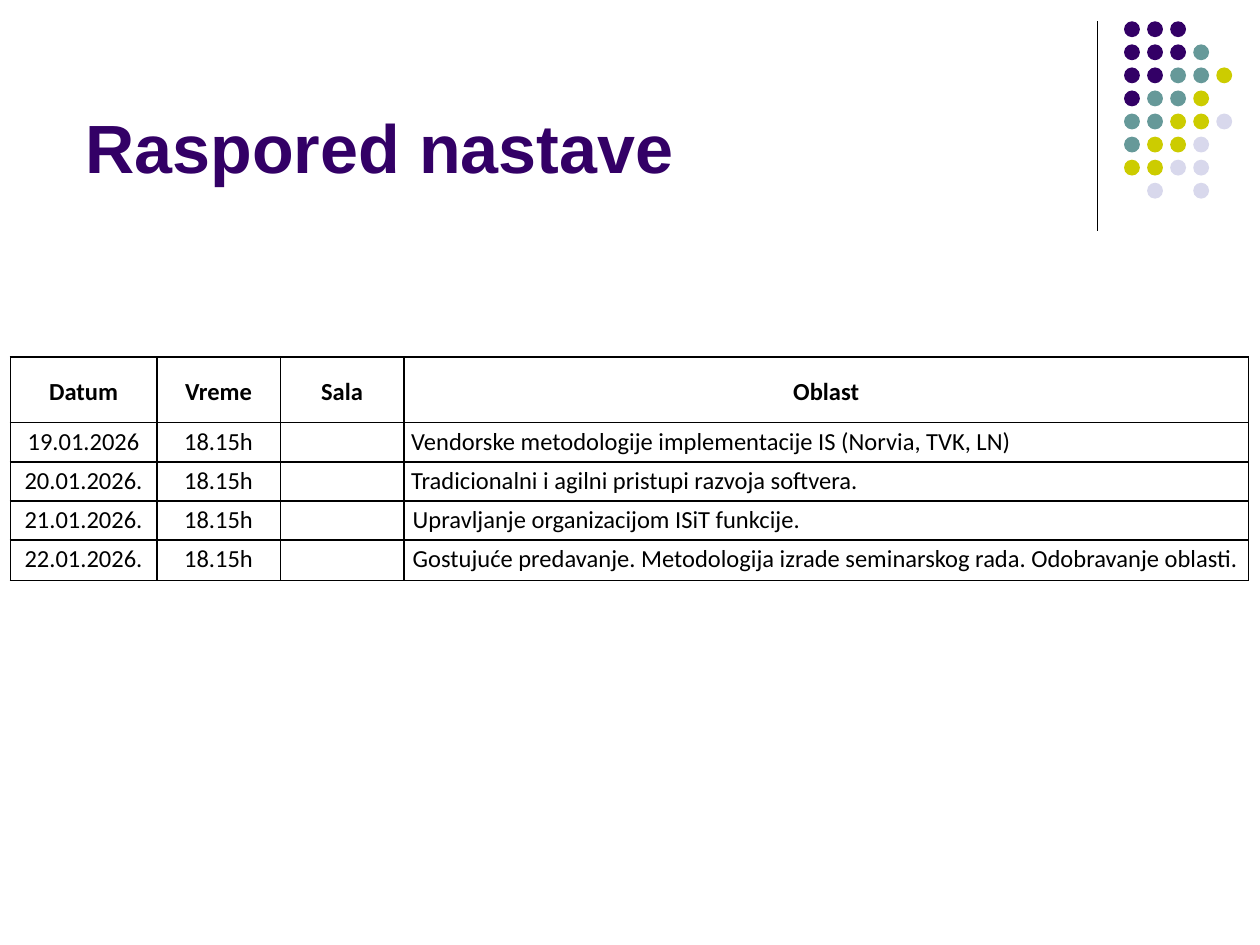
from lxml import etree
from pptx import Presentation
from pptx.dml.color import RGBColor
from pptx.enum.shapes import MSO_CONNECTOR, MSO_SHAPE
from pptx.enum.text import MSO_ANCHOR, MSO_AUTO_SIZE, PP_ALIGN
from pptx.oxml.ns import qn
from pptx.util import Cm, Pt

LEFT, CENTER = PP_ALIGN.LEFT, PP_ALIGN.CENTER
TOP, MIDDLE, BOTTOM = MSO_ANCHOR.TOP, MSO_ANCHOR.MIDDLE, MSO_ANCHOR.BOTTOM

COLORS = {
    "purple": "330066",
    "teal": "669999",
    "lime": "CCCC00",
    "lavender": "D8D8EC",
    "black": "000000",
    "white": "FFFFFF",
}
DOT_COLORS = {"P": "purple", "T": "teal", "L": "lime", "V": "lavender"}
DOT_PATTERN = ["PPP", "PPPT", "PPTTL", "PTTL", "TTLLV", "TLLV", "LLVV", " V V"]

HEADINGS = ["Datum", "Vreme", "Sala", "Oblast"]
LECTURES = [
    ["19.01.2026", "18.15h", "",
     "Vendorske metodologije implementacije IS (Norvia, TVK, LN)"],
    ["20.01.2026.", "18.15h", "",
     "Tradicionalni i agilni pristupi razvoja softvera."],
    ["21.01.2026.", "18.15h", "", "Upravljanje organizacijom ISiT funkcije."],
    ["22.01.2026.", "18.15h", "",
     "Gostujuće predavanje. Metodologija izrade seminarskog rada. "
     "Odobravanje oblasti."],
]
COLUMN_WIDTHS = [2.95, 2.49, 2.49, 17.03]
ROW_HEIGHTS = [1.32, 0.79, 0.79, 0.79, 0.81]


def rgb(name):
    return RGBColor.from_string(COLORS[name])


def add_run(paragraph, text, font, size, color, bold):
    run = paragraph.add_run()
    run.text = text
    run.font.name = font
    run.font.size = Pt(size)
    run.font.color.rgb = rgb(color)
    run.font.bold = bold


def place_title(slide, left, top, width, height):
    title = slide.shapes.title
    title.left, title.top = Cm(left), Cm(top)
    title.width, title.height = Cm(width), Cm(height)
    frame = title.text_frame
    frame.word_wrap = True
    frame.auto_size = MSO_AUTO_SIZE.NONE
    frame.vertical_anchor = BOTTOM
    heading = frame.paragraphs[0]
    heading.alignment = LEFT
    add_run(heading, "Raspored nastave", "Arial", 39, "purple", True)


def add_corner_ornament(slide, left, top, width, height):
    """Draw the vertical rule and, along the right edge, the grid of dots."""
    rule = slide.shapes.add_connector(
        MSO_CONNECTOR.STRAIGHT, Cm(left), Cm(top), Cm(left), Cm(top + height))
    rule.line.color.rgb = rgb("black")
    rule.line.width = Pt(0.75)
    etree.SubElement(rule._element.spPr, qn("a:effectLst"))

    diameter, pitch = 0.32, 0.465
    dots_left = left + width - 4 * pitch - diameter
    dots = slide.shapes.add_group_shape()
    for row, pattern in enumerate(DOT_PATTERN):
        for column, code in enumerate(pattern):
            if code == " ":
                continue
            dot = dots.shapes.add_shape(
                MSO_SHAPE.OVAL, Cm(dots_left + column * pitch),
                Cm(top + row * pitch), Cm(diameter), Cm(diameter))
            dot.shadow.inherit = False
            dot.fill.solid()
            dot.fill.fore_color.rgb = rgb(DOT_COLORS[code])
            dot.line.fill.background()


def add_borders(cell):
    properties = cell._tc.get_or_add_tcPr()
    for position, side in enumerate(("a:lnL", "a:lnR", "a:lnT", "a:lnB")):
        border = etree.Element(qn(side), w=str(Pt(1)))
        fill = etree.SubElement(border, qn("a:solidFill"))
        etree.SubElement(fill, qn("a:srgbClr"), val=COLORS["black"])
        properties.insert(position, border)


def fill_cell(cell, text, is_header, column, side_margin):
    cell.margin_left = cell.margin_right = Cm(side_margin)
    cell.margin_top = cell.margin_bottom = 0
    cell.vertical_anchor = MIDDLE if is_header else TOP
    if is_header:
        cell.fill.background()
    else:
        cell.fill.solid()
        cell.fill.fore_color.rgb = rgb("white")
    add_borders(cell)
    if text:
        paragraph = cell.text_frame.paragraphs[0]
        paragraph.alignment = CENTER if is_header or column < 3 else LEFT
        paragraph.line_spacing = 1.15
        add_run(paragraph, text, "Calibri", 14, "black", is_header)


def add_schedule(slide, left, top):
    rows = [HEADINGS] + LECTURES
    schedule = slide.shapes.add_table(
        len(rows), len(HEADINGS), Cm(left), Cm(top),
        Cm(sum(COLUMN_WIDTHS)), Cm(sum(ROW_HEIGHTS))).table
    schedule.first_row = schedule.horz_banding = False
    for column, width in zip(schedule.columns, COLUMN_WIDTHS):
        column.width = Cm(width)
    for row, height in zip(schedule.rows, ROW_HEIGHTS):
        row.height = Cm(height)
    for r, texts in enumerate(rows):
        for c, text in enumerate(texts):
            side_margin = 0.18 if r >= 3 and c == 3 else 0.15
            fill_cell(schedule.cell(r, c), text, r == 0, c, side_margin)


def main():
    presentation = Presentation()
    presentation.slide_width, presentation.slide_height = Cm(25.4), Cm(19.05)
    slide = presentation.slides.add_slide(presentation.slide_layouts[5])
    slide.background.fill.solid()
    slide.background.fill.fore_color.rgb = rgb("white")
    add_corner_ornament(slide, 22.12, 0.43, 2.72, 4.22)
    place_title(slide, 1.47, 2.34, 20.75, 1.57)
    add_schedule(slide, 0.21, 7.2)
    presentation.save("out.pptx")


if __name__ == "__main__":
    main()
